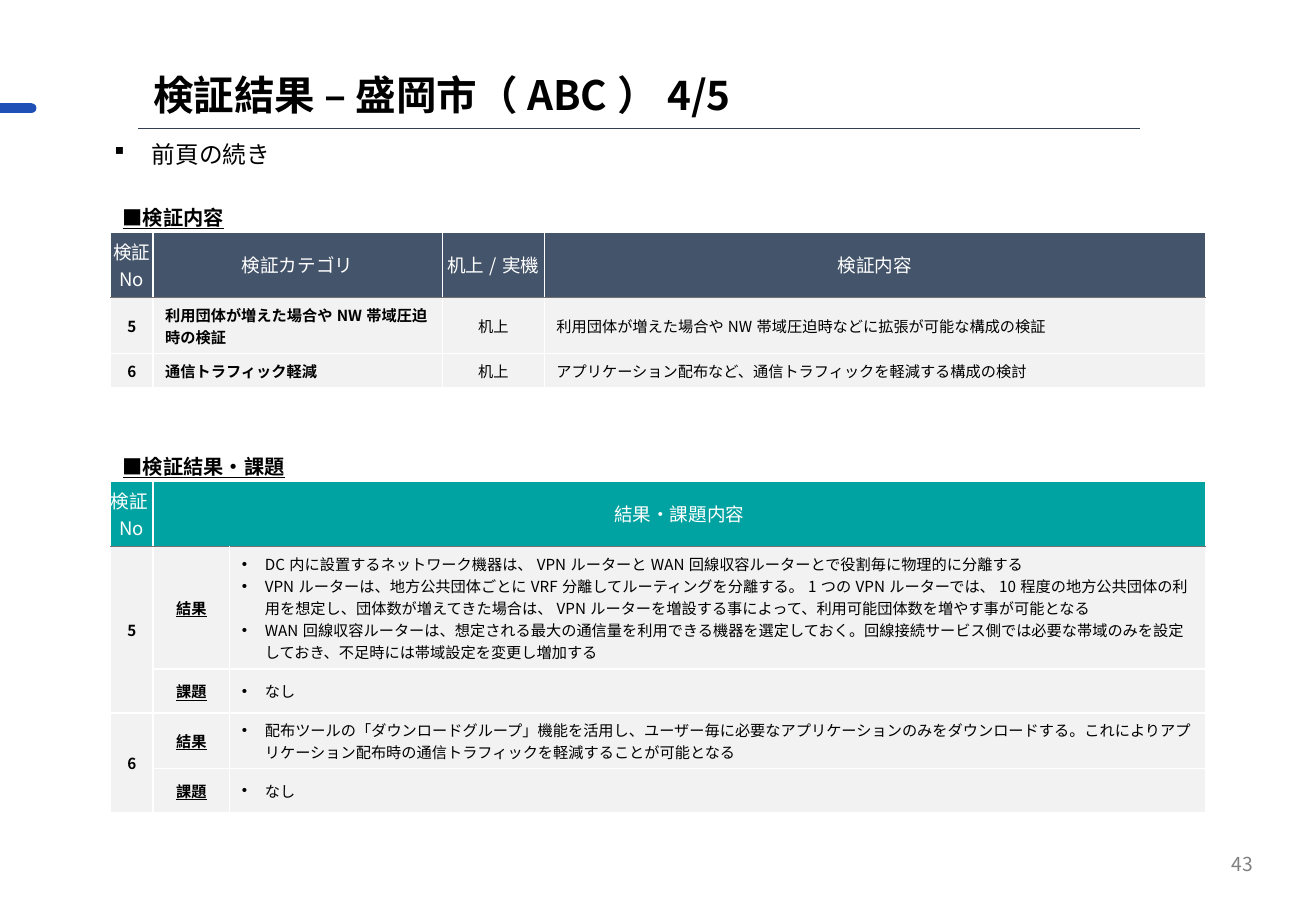
from lxml import etree
from pptx import Presentation
from pptx.dml.color import RGBColor
from pptx.enum.shapes import MSO_CONNECTOR, MSO_SHAPE
from pptx.enum.text import MSO_ANCHOR, MSO_AUTO_SIZE, PP_ALIGN
from pptx.oxml.ns import qn
from pptx.util import Inches, Pt

FONT = "Noto Sans CJK JP"
BLACK = RGBColor(0x00, 0x00, 0x00)
WHITE = RGBColor(0xFF, 0xFF, 0xFF)
BLUE = RGBColor(0x1E, 0x50, 0xB5)
NAVY = RGBColor(0x33, 0x3F, 0x50)
SLATE = RGBColor(0x44, 0x54, 0x6A)
TEAL = RGBColor(0x00, 0xA3, 0xA1)
PALE = RGBColor(0xF2, 0xF2, 0xF2)
RULE = RGBColor(0x76, 0x71, 0x71)
GREY = RGBColor(0x80, 0x80, 0x80)

CHECKS = [
    ("5", "利用団体が増えた場合やNW帯域圧迫時の検証", "机上",
     "利用団体が増えた場合やNW帯域圧迫時などに拡張が可能な構成の検証"),
    ("6", "通信トラフィック軽減", "机上",
     "アプリケーション配布など、通信トラフィックを軽減する構成の検討"),
]
RESULTS = [
    ("5", "結果",
     "DC内に設置するネットワーク機器は、VPNルーターとWAN回線収容ルーターとで役割毎に物理的に分離する\n"
     "VPNルーターは、地方公共団体ごとにVRF分離してルーティングを分離する。1つのVPNルーターでは、"
     "10程度の地方公共団体の利用を想定し、団体数が増えてきた場合は、VPNルーターを増設する事によって、"
     "利用可能団体数を増やす事が可能となる\n"
     "WAN回線収容ルーターは、想定される最大の通信量を利用できる機器を選定しておく。"
     "回線接続サービス側では必要な帯域のみを設定しておき、不足時には帯域設定を変更し増加する"),
    ("", "課題", "なし"),
    ("6", "結果",
     "配布ツールの「ダウンロードグループ」機能を活用し、ユーザー毎に必要なアプリケーションのみを"
     "ダウンロードする。これによりアプリケーション配布時の通信トラフィックを軽減することが可能となる"),
    ("", "課題", "なし"),
]


def write(frame, text, size, color=BLACK, bold=False, underline=False, align=PP_ALIGN.LEFT):
    frame.text = text
    for paragraph in frame.paragraphs:
        paragraph.alignment = align
        for run in paragraph.runs:
            font = run.font
            font.name, font.size, font.bold, font.underline = FONT, Pt(size), bold, underline
            font.color.rgb = color
            east_asian = etree.SubElement(run._r.get_or_add_rPr(), qn("a:ea"))
            east_asian.set("typeface", FONT)


def add_bullets(frame, char, bullet_font, indent):
    for paragraph in frame.paragraphs:
        props = paragraph._p.get_or_add_pPr()
        props.set("marL", str(Inches(indent)))
        props.set("indent", str(-Inches(indent)))
        etree.SubElement(props, qn("a:buFont")).set("typeface", bullet_font)
        etree.SubElement(props, qn("a:buChar")).set("char", char)


def set_insets(box, left, top, right, bottom):
    box.margin_left, box.margin_top = Inches(left), Inches(top)
    box.margin_right, box.margin_bottom = Inches(right), Inches(bottom)


def add_text_box(slide, left, top, width, height):
    box = slide.shapes.add_textbox(Inches(left), Inches(top), Inches(width), Inches(height))
    box.text_frame.word_wrap = True
    return box.text_frame


def set_borders(cell, top=WHITE, bottom=WHITE):
    props = cell._tc.get_or_add_tcPr()
    for side, color in (("L", WHITE), ("R", WHITE), ("T", top), ("B", bottom)):
        line = etree.SubElement(props, qn("a:ln" + side), w=str(Pt(1)))
        fill = etree.SubElement(line, qn("a:solidFill"))
        etree.SubElement(fill, qn("a:srgbClr"), val=str(color))


def add_grid(slide, left, top, widths, heights, caption, headings, header_color):
    """Add a table with a caption row, a coloured header row and pale body rows."""
    grid = slide.shapes.add_table(len(heights), len(widths), Inches(left), Inches(top),
                                  Inches(sum(widths)), Inches(sum(heights))).table
    grid.first_row = grid.horz_banding = False
    for column, width in zip(grid.columns, widths):
        column.width = Inches(width)
    for row, height in zip(grid.rows, heights):
        row.height = Inches(height)

    for r, row in enumerate(grid.rows):
        for cell in row.cells:
            set_borders(cell, RULE if r == 2 else WHITE, RULE if r == 1 else WHITE)
            if r == 0:
                cell.fill.background()
                set_insets(cell, 0.1, 0, 0.1, 0)
                continue
            cell.fill.solid()
            cell.fill.fore_color.rgb = header_color if r == 1 else PALE
            cell.vertical_anchor = MSO_ANCHOR.MIDDLE
            inset = 0 if r == 1 else 0.1
            set_insets(cell, inset, 0.05, inset, 0.05)

    grid.cell(0, 0).merge(grid.cell(0, len(widths) - 1))
    write(grid.cell(0, 0).text_frame, caption, 12, bold=True, underline=True)
    for c, heading in enumerate(headings):
        write(grid.cell(1, c).text_frame, heading, 11, WHITE, align=PP_ALIGN.CENTER)
    return grid


def write_number(cell, number):
    set_insets(cell, 0.01, 0.01, 0.01, 0)
    write(cell.text_frame, number, 9, bold=True, align=PP_ALIGN.CENTER)


def add_check_table(slide, left, top):
    grid = add_grid(slide, left, top, [0.35, 2.38, 0.84, 5.44], [0.25, 0.54, 0.46, 0.28],
                    "■検証内容", ["検証\nNo", "検証カテゴリ", "机上/実機", "検証内容"], SLATE)
    for r, (number, category, method, content) in enumerate(CHECKS, 2):
        write_number(grid.cell(r, 0), number)
        write(grid.cell(r, 1).text_frame, category, 9, bold=True)
        write(grid.cell(r, 2).text_frame, method, 9, align=PP_ALIGN.CENTER)
        write(grid.cell(r, 3).text_frame, content, 9)


def add_result_table(slide, left, top):
    grid = add_grid(slide, left, top, [0.35, 0.63, 8.03], [0.25, 0.54, 1.01, 0.36, 0.46, 0.36],
                    "■検証結果・課題", ["検証No", "結果・課題内容"], TEAL)
    grid.cell(1, 1).merge(grid.cell(1, 2))
    for r, (number, label, findings) in enumerate(RESULTS, 2):
        if number:
            grid.cell(r, 0).merge(grid.cell(r + 1, 0))
            write_number(grid.cell(r, 0), number)
        write(grid.cell(r, 1).text_frame, label, 9, bold=True, underline=True,
              align=PP_ALIGN.CENTER)
        body = grid.cell(r, 2).text_frame
        write(body, findings, 9)
        add_bullets(body, "•", "Arial", 0.19)


def add_heading(slide, left, top):
    """Place the title, the rule below it and the accent at the slide's edge."""
    accent = slide.shapes.add_shape(MSO_SHAPE.ROUNDED_RECTANGLE, Inches(-0.08),
                                    Inches(top + 0.3), Inches(0.38), Inches(0.08))
    accent.adjustments[0] = 0.5
    accent.shadow.inherit = False
    accent.fill.solid()
    accent.fill.fore_color.rgb = BLUE
    accent.line.fill.background()

    title = slide.shapes.title
    title.left, title.top = Inches(left), Inches(top)
    title.width, title.height = Inches(8.52), Inches(0.45)
    frame = title.text_frame
    frame.auto_size = MSO_AUTO_SIZE.NONE
    frame.vertical_anchor = MSO_ANCHOR.MIDDLE
    set_insets(frame, 0, 0, 0, 0)
    write(frame, "検証結果 – 盛岡市（ABC）4/5", 24, bold=True)

    rule_y = Inches(top + 0.51)
    rule = slide.shapes.add_connector(MSO_CONNECTOR.STRAIGHT, Inches(left - 0.12), rule_y,
                                      Inches(left + 8.12), rule_y)
    rule.line.color.rgb = NAVY
    rule.line.width = Pt(0.5)
    etree.SubElement(rule._element.spPr, qn("a:effectLst"))


def add_lead(slide, left, top):
    frame = add_text_box(slide, left, top, 9.32, 0.55)
    set_insets(frame, 0.06, 0.06, 0.06, 0.06)
    write(frame, "前頁の続き", 14)
    frame.paragraphs[0].space_after = Pt(6)
    add_bullets(frame, "§", "Wingdings", 0.31)


def add_page_number(slide, left, top):
    frame = add_text_box(slide, left, top, 2.44, 0.4)
    frame.vertical_anchor = MSO_ANCHOR.MIDDLE
    write(frame, "43", 11.4, GREY, align=PP_ALIGN.RIGHT)


def main():
    deck = Presentation()
    deck.slide_width, deck.slide_height = Inches(10.83), Inches(7.5)
    slide = deck.slides.add_slide(deck.slide_layouts[5])
    add_heading(slide, 1.26, 0.55)
    add_lead(slide, 0.88, 1.09)
    add_check_table(slide, 0.91, 1.66)
    add_result_table(slide, 0.91, 3.71)
    add_page_number(slide, 7.97, 6.91)
    deck.save("out.pptx")


if __name__ == "__main__":
    main()
